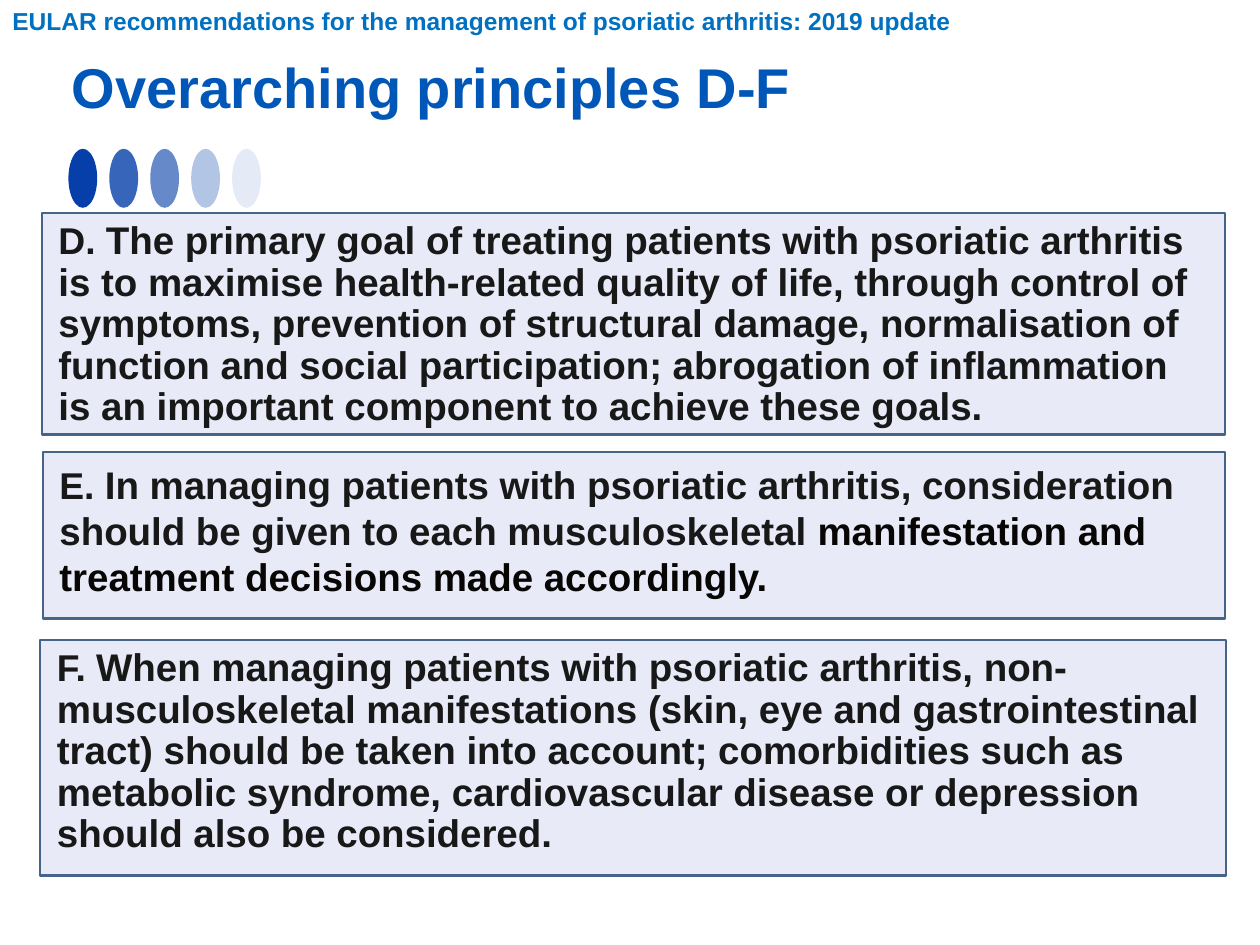
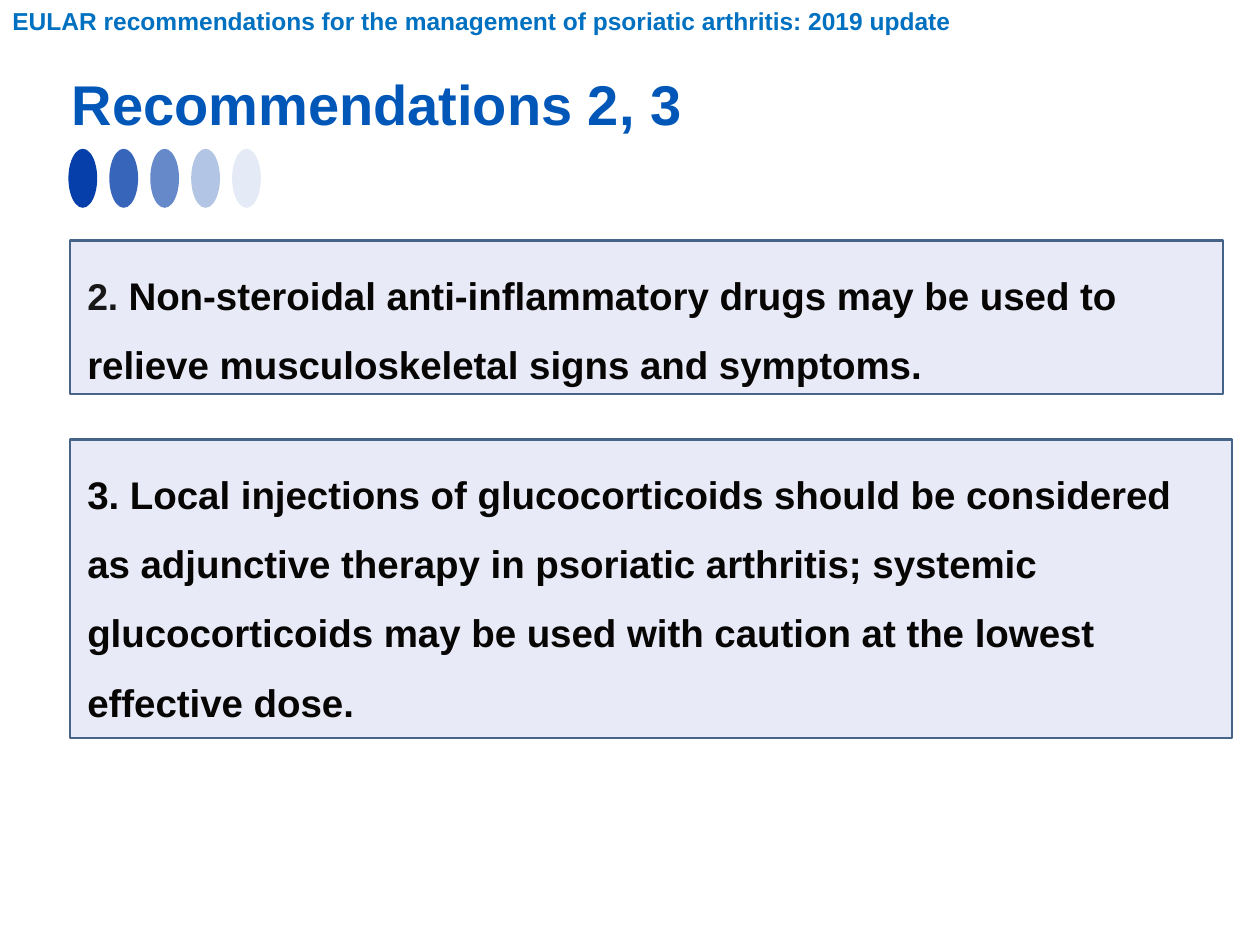
"""Build two slides of psoriatic arthritis management recommendations."""
from lxml import etree
from pptx import Presentation
from pptx.dml.color import RGBColor
from pptx.enum.shapes import MSO_SHAPE
from pptx.enum.text import MSO_ANCHOR, MSO_AUTO_SIZE, PP_ALIGN
from pptx.oxml.ns import qn
from pptx.util import Cm, Pt

OVAL, RECTANGLE = MSO_SHAPE.OVAL, MSO_SHAPE.RECTANGLE
TOP, LEFT, NO_AUTOSIZE = MSO_ANCHOR.TOP, PP_ALIGN.LEFT, MSO_AUTO_SIZE.NONE

TITLE_BLUE = "0057B8"
HEADER_BLUE = "0070C0"
DOT_BLUE = "063FA9"
BOX_FILL = "E8EBF7"
BOX_LINE = "466488"
CHARCOAL = "181818"
BLACK = "070605"

HEADER = "EULAR recommendations for the management of psoriatic arthritis: 2019 update"
DOT_OPACITIES = [100, 80, 61, 30, 10]
LABEL_SIZE, BODY_SIZE = 21.3, 22

SLIDES = [
    ("Overarching principles D-F", (1.19, 0.94, 15.11, 1.63), [
        ((0.84, 4.29, 23.85, 4.47), 0.9, [
            ("D. ", LABEL_SIZE, CHARCOAL),
            ("The primary goal of treating patients with psoriatic arthritis is to maximise "
             "health-related quality of life, through control of symptoms, prevention of "
             "structural damage, normalisation of function and social participation; "
             "abrogation of inflammation is an important component to achieve these goals.",
             BODY_SIZE, CHARCOAL)]),
        ((0.86, 9.12, 23.83, 3.35), 1.0, [
            ("E. ", LABEL_SIZE, CHARCOAL),
            ("In managing patients with psoriatic arthritis, consideration should be given "
             "to each musculoskeletal ", BODY_SIZE, CHARCOAL),
            ("manifestation and treatment decisions made accordingly.", BODY_SIZE, BLACK)]),
        ((0.81, 12.9, 23.9, 4.75), 0.9, [
            ("F. ", LABEL_SIZE, CHARCOAL),
            ("When managing patients with psoriatic arthritis, non-musculoskeletal "
             "manifestations (skin, eye and gastrointestinal tract) should be taken into "
             "account; comorbidities such as metabolic syndrome, cardiovascular disease or "
             "depression should also be considered.", BODY_SIZE, CHARCOAL)]),
    ]),
    ("Recommendations 2, 3", (1.19, 1.27, 12.9, 1.63), [
        ((1.42, 4.85, 23.24, 3.1), 1.5, [
            ("2. ", LABEL_SIZE, CHARCOAL),
            ("Non-steroidal anti-inflammatory drugs may be used to relieve musculoskeletal "
             "signs and symptoms.", BODY_SIZE, BLACK)]),
        ((1.42, 8.86, 23.42, 6.02), 1.5, [
            ("3. Local injections of glucocorticoids should be considered as adjunctive "
             "therapy in psoriatic arthritis; systemic glucocorticoids may be used with "
             "caution at the lowest effective dose.", BODY_SIZE, BLACK)]),
    ]),
]


def color(hex_string):
    """Return the colour of a hex string."""
    return RGBColor.from_string(hex_string)


def write(shape, runs, line_spacing=1.0, wrap=True):
    """Fill a shape with one left-aligned bold paragraph of (text, size, colour) runs."""
    frame = shape.text_frame
    frame.word_wrap = wrap
    frame.auto_size = NO_AUTOSIZE
    frame.vertical_anchor = TOP
    paragraph = frame.paragraphs[0]
    paragraph.alignment = LEFT
    paragraph.line_spacing = line_spacing
    for text, size, hex_string in runs:
        run = paragraph.add_run()
        run.text = text
        run.font.name = "Arial"
        run.font.size = Pt(size)
        run.font.bold = True
        run.font.color.rgb = color(hex_string)


presentation = Presentation()
presentation.slide_width, presentation.slide_height = Cm(25.4), Cm(19.05)

for title_text, title_place, boxes in SLIDES:
    slide = presentation.slides.add_slide(presentation.slide_layouts[5])
    title = slide.shapes.title
    title.left, title.top, title.width, title.height = map(Cm, title_place)
    write(title, [(title_text, 32, TITLE_BLUE)], wrap=False)

    for index, opacity in enumerate(DOT_OPACITIES):
        dot = slide.shapes.add_shape(OVAL, Cm(1.38 + 0.825 * index), Cm(3), Cm(0.58), Cm(1.19))
        dot.shadow.inherit = False
        dot.fill.solid()
        dot.fill.fore_color.rgb = color(DOT_BLUE)
        dot.line.fill.background()
        if opacity < 100:
            fill_color = dot.element.spPr.find(qn("a:solidFill"))[0]
            etree.SubElement(fill_color, qn("a:alpha"), val=str(opacity * 1000))

    for place, line_spacing, runs in boxes:
        box = slide.shapes.add_shape(RECTANGLE, *map(Cm, place))
        box.shadow.inherit = False
        box.fill.solid()
        box.fill.fore_color.rgb = color(BOX_FILL)
        box.line.color.rgb = color(BOX_LINE)
        box.line.width = Pt(1.25)
        frame = box.text_frame
        frame.margin_left = frame.margin_right = Cm(0.34)
        frame.margin_top = frame.margin_bottom = Cm(0.17)
        write(box, runs, line_spacing)

    header = slide.shapes.add_textbox(Cm(0), Cm(0), Cm(19.51), Cm(0.86))
    write(header, [(HEADER, 14, HEADER_BLUE)], wrap=False)

presentation.save("out.pptx")
